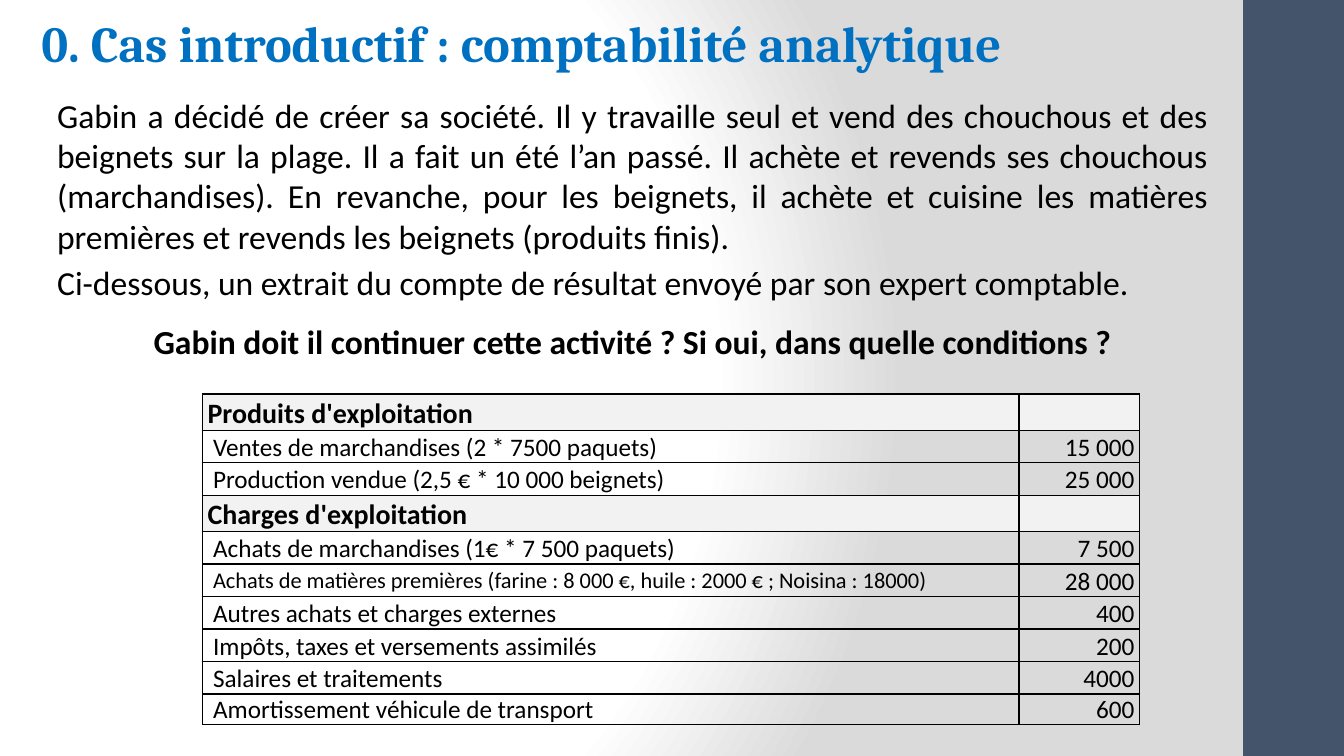
import pptx
import pptx.dml.color
import pptx.enum.shapes
import pptx.enum.text
import pptx.oxml
import pptx.oxml.ns
import pptx.util

Cm = pptx.util.Cm
Pt = pptx.util.Pt
ALIGN = pptx.enum.text.PP_ALIGN
ANCHOR = pptx.enum.text.MSO_ANCHOR

BLACK = "000000"
NARRATIVE = [
    ("Gabin a décidé de créer sa société. Il y travaille seul et vend des chouchous et des "
     "beignets sur la plage. Il a fait un été l’an passé. Il achète et revends ses chouchous "
     "(marchandises). En revanche, pour les beignets, il achète et cuisine les matières "
     "premières et revends les beignets (produits finis).", ALIGN.JUSTIFY, 0, False),
    ("Ci-dessous, un extrait du compte de résultat envoyé par son expert comptable.",
     ALIGN.LEFT, 4, False),
    ("Gabin doit il continuer cette activité ? Si oui, dans quelle conditions ?",
     ALIGN.CENTER, 13.5, True),
]
INCOME_STATEMENT = [
    ("Produits d'exploitation", "", 20),
    ("Ventes de marchandises (2 * 7500 paquets)", "15 000", 18),
    ("Production vendue (2,5 € * 10 000 beignets)", "25 000", 18),
    ("Charges d'exploitation", "", 20),
    ("Achats de marchandises (1€ * 7 500 paquets)", "7 500", 18),
    ("Achats de matières premières (farine : 8 000 €, huile : 2000 € ; Noisina : 18000)",
     "28 000", 16),
    ("Autres achats et charges externes", "400", 18),
    ("Impôts, taxes et versements assimilés", "200", 18),
    ("Salaires et traitements", "4000", 18),
    ("Amortissement véhicule de transport", "600", 18),
]


def color(value):
    return pptx.dml.color.RGBColor.from_string(value)


def apply(target, values):
    for name, value in values.items():
        setattr(target, name, value)


def write(paragraph, text, size, ink=BLACK, face="Calibri", bold=False, **layout):
    run = paragraph.add_run()
    run.text = text
    apply(run.font, {"size": Pt(size), "name": face, "bold": bold})
    run.font.color.rgb = color(ink)
    apply(paragraph, layout)


def paint_background(slide):
    slide.background.fill.solid()
    backdrop = slide.element.find(".//" + pptx.oxml.ns.qn("p:bgPr"))
    stops = "".join(
        f'<a:gs pos="{position * 1000}"><a:srgbClr val="{shade}"/></a:gs>'
        for position, shade in [(0, "FFFFFF"), (75, "FFFFFF"), (100, "DADADA")])
    backdrop.replace(backdrop[0], pptx.oxml.parse_xml(
        f'<a:gradFill {pptx.oxml.ns.nsdecls("a")} rotWithShape="1"><a:gsLst>{stops}</a:gsLst>'
        '<a:path path="circle"><a:fillToRect l="20000" t="50000" r="100000" b="50000"/>'
        '</a:path></a:gradFill>'))


def add_side_band(slide, left, top, width, height):
    band = slide.shapes.add_shape(
        pptx.enum.shapes.MSO_SHAPE.RECTANGLE, left, top, width, height)
    band.shadow.inherit = False
    band.fill.solid()
    band.fill.fore_color.rgb = color("44546A")
    band.line.fill.background()


def add_title(slide, left, top, width, height):
    title = slide.shapes.add_textbox(left, top, width, height).text_frame
    apply(title, {"word_wrap": True, "vertical_anchor": ANCHOR.BOTTOM, "margin_left": 0,
                  "margin_right": 0, "margin_bottom": 0})
    write(title.paragraphs[0], "0. Cas introductif : comptabilité analytique", 36,
          "0070C0", "Cambria", True, alignment=ALIGN.CENTER)


def add_narrative(slide, left, top, width, height):
    narrative = slide.shapes.add_textbox(left, top, width, height).text_frame
    narrative.word_wrap = True
    for index, (text, alignment, gap, bold) in enumerate(NARRATIVE):
        paragraph = narrative.add_paragraph() if index else narrative.paragraphs[0]
        write(paragraph, text, 24, bold=bold, alignment=alignment, space_before=Pt(gap))


def add_borders(cell):
    properties = cell._tc.get_or_add_tcPr()
    for index, side in enumerate(("lnL", "lnR", "lnT", "lnB")):
        properties.insert(index, pptx.oxml.parse_xml(
            f'<a:{side} {pptx.oxml.ns.nsdecls("a")} w="12700"><a:solidFill>'
            f'<a:srgbClr val="{BLACK}"/></a:solidFill></a:{side}>'))


def add_income_statement(slide, left, top, width, height):
    statement = slide.shapes.add_table(
        len(INCOME_STATEMENT), 2, left, top, width, height).table
    apply(statement, {"first_row": False, "horz_banding": False})
    amount_width = Cm(3.04)
    statement.columns[0].width = width - amount_width
    statement.columns[1].width = amount_width
    last = len(INCOME_STATEMENT) - 1
    for index, (label, amount, size) in enumerate(INCOME_STATEMENT):
        heading = not amount
        statement.rows[index].height = Cm(0.91 if heading else 0.76 if index == last else 0.82)
        spacing = 1 if index == last else 1.07
        label_cell, amount_cell = statement.rows[index].cells
        for cell in (label_cell, amount_cell):
            apply(cell, {"margin_left": Cm(0.13), "margin_right": Cm(0.13), "margin_top": 0,
                         "margin_bottom": 0, "vertical_anchor": ANCHOR.BOTTOM})
            if heading:
                cell.fill.solid()
                cell.fill.fore_color.rgb = color("F2F2F2")
            else:
                cell.fill.background()
            add_borders(cell)
        if not heading:
            apply(label_cell, {"margin_left": Cm(0.27), "vertical_anchor": ANCHOR.MIDDLE})
            write(amount_cell.text_frame.paragraphs[0], amount, 18,
                  alignment=ALIGN.RIGHT, line_spacing=spacing)
        write(label_cell.text_frame.paragraphs[0], label, size, bold=heading,
              line_spacing=spacing)


def main():
    deck = pptx.Presentation()
    apply(deck, {"slide_width": Cm(33.87), "slide_height": Cm(19.05)})
    slide = deck.slides.add_slide(deck.slide_layouts[6])
    paint_background(slide)
    add_side_band(slide, Cm(31.33), 0, Cm(2.54), deck.slide_height)
    add_title(slide, 0, 0, Cm(26.28), Cm(1.83))
    add_narrative(slide, Cm(1.19), Cm(2.26), Cm(29.51), Cm(8.08))
    add_income_statement(slide, Cm(5.1), Cm(9.93), Cm(23.62), Cm(8.32))
    deck.save("out.pptx")


if __name__ == "__main__":
    main()
